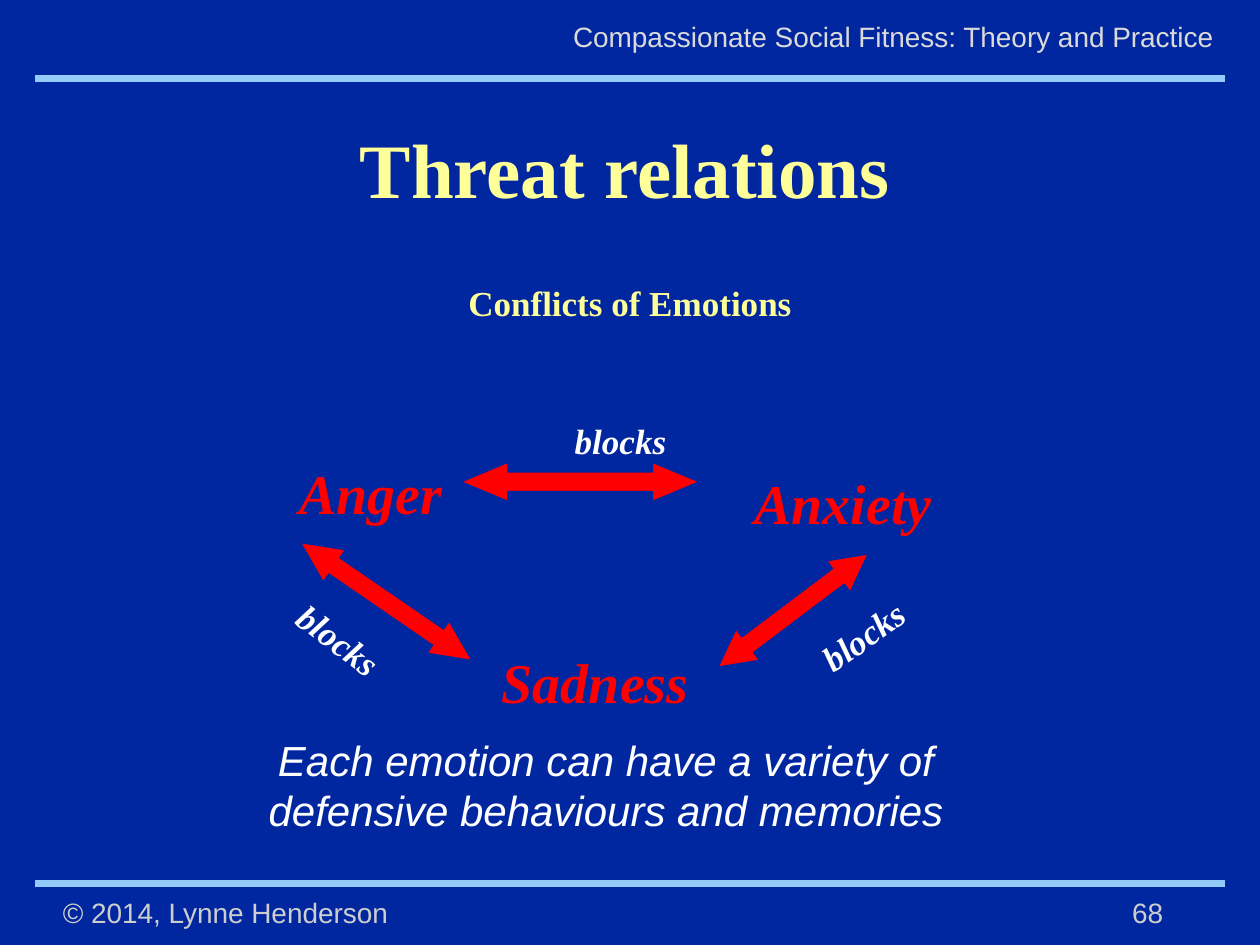
from dataclasses import dataclass

from lxml.etree import SubElement
from pptx import Presentation
from pptx.dml.color import RGBColor
from pptx.enum.shapes import MSO_CONNECTOR, MSO_SHAPE
from pptx.enum.text import MSO_ANCHOR, PP_ALIGN
from pptx.oxml.ns import qn
from pptx.util import Pt


@dataclass(frozen=True)
class Theme:
    background: str = "00279F"
    rule: str = "92CAFA"
    footer: str = "CECECE"
    header: str = "DADADA"
    heading: str = "FFFF99"
    emotion: str = "FF0000"
    white: str = "FFFFFF"
    serif: str = "Times New Roman"
    sans: str = "Arial"
    title_size: int = 44
    emotion_size: int = 32
    note_size: int = 24
    label_size: int = 20
    small_size: int = 16


THEME = Theme()


def color(value):
    return RGBColor.from_string(value)


def write(tf, text, *, size, fill, font=THEME.sans, bold=False, italic=False,
          align=PP_ALIGN.CENTER, anchor=MSO_ANCHOR.TOP):
    tf.word_wrap = True
    tf.vertical_anchor = anchor
    p = tf.paragraphs[0]
    p.alignment = align
    p.space_before = Pt(0)
    r = p.add_run()
    r.text = text
    r.font.name = font
    r.font.size = Pt(size)
    r.font.bold = bold
    r.font.italic = italic
    r.font.color.rgb = color(fill)
    return r


def place(sp, box):
    sp.left, sp.top, sp.width, sp.height = (Pt(v) for v in box)


def add_text(s, box, text, rotation=0, **style):
    sp = s.shapes.add_textbox(*(Pt(v) for v in box))
    sp.rotation = rotation
    write(sp.text_frame, text, **style)


def add_rule(s, left, top, width):
    line = s.shapes.add_connector(
        MSO_CONNECTOR.STRAIGHT, Pt(left), Pt(top), Pt(left + width), Pt(top))
    line.line.color.rgb = color(THEME.rule)
    line.line.width = Pt(4)
    SubElement(line._element.spPr, qn("a:effectLst"))


def add_header(s, box):
    x, y, w, h = box
    add_rule(s, x, y + h, w)
    add_text(s, (x + 285.1, y, 395.3, 26.6),
             "Compassionate Social Fitness: Theory and Practice",
             size=THEME.small_size, fill=THEME.header, align=PP_ALIGN.RIGHT)


def add_footer(s, box):
    x, y, w, h = box
    add_rule(s, x, y, w)
    style = dict(size=THEME.small_size, fill=THEME.footer)
    add_text(s, (x + 8.6, y + 3.6, 210, h - 3.6), "© 2014, Lynne Henderson",
             align=PP_ALIGN.LEFT, **style)
    add_text(s, (x + w - 78, y + 3.6, 50, h - 3.6), "68",
             align=PP_ALIGN.RIGHT, **style)


def add_title(s, box):
    sp = s.shapes.title
    place(sp, box)
    r = write(sp.text_frame, "Threat relations", size=THEME.title_size,
              fill=THEME.heading, font=THEME.serif, bold=True,
              anchor=MSO_ANCHOR.BOTTOM)
    effects = r.font._element.find(qn("a:solidFill"))
    shadow_list = effects.makeelement(qn("a:effectLst"))
    effects.addnext(shadow_list)
    shadow = SubElement(shadow_list, qn("a:outerShdw"), blurRad="38100",
                        dist="38100", dir="2700000", algn="tl")
    SubElement(shadow, qn("a:srgbClr"), val="000000")


def add_subtitle(s, box):
    sp = s.placeholders[1]
    place(sp, box)
    pPr = sp.text_frame.paragraphs[0]._p.get_or_add_pPr()
    pPr.set("marL", "0")
    pPr.set("indent", "0")
    SubElement(pPr, qn("a:buNone"))
    write(sp.text_frame, "Conflicts of Emotions", size=THEME.label_size,
          fill=THEME.heading, font=THEME.serif, bold=True)


def add_arrow(s, box, rotation, head):
    sp = s.shapes.add_shape(MSO_SHAPE.LEFT_RIGHT_ARROW, *(Pt(v) for v in box))
    sp.rotation = rotation
    sp.adjustments[0] = 0.5
    sp.adjustments[1] = head
    sp.shadow.inherit = False
    sp.fill.solid()
    sp.fill.fore_color.rgb = color(THEME.emotion)
    sp.line.color.rgb = color(THEME.background)
    sp.line.width = Pt(0.75)


def add_conflict_triangle(s, box):
    x, y = box[:2]
    style = dict(font=THEME.serif, bold=True, italic=True)
    emotions = [("Anger", 4.5, 22.5, 113), ("Anxiety", 248.6, 28.2, 164.2),
                ("Sadness", 124, 130.5, 130.3)]
    for name, dx, dy, w in emotions:
        add_text(s, (x + dx, y + dy, w, 41.8), name,
                 size=THEME.emotion_size, fill=THEME.emotion, **style)
    arrows = [(10.3, 96.6, 118.8, 34.5, 1.05), (112.5, 28.2, 136.1, 0, 1.2),
              (248.6, 101.7, 107.3, 323, 0.95)]
    for dx, dy, w, rotation, head in arrows:
        add_arrow(s, (x + dx, y + dy, w, 22.3), rotation, head)
    labels = [(0.2, 113.9, 84.2, 37), (288.2, 111.8, 108, 324.7),
              (141.3, 0.2, 124.6, 0)]
    for dx, dy, w, rotation in labels:
        add_text(s, (x + dx, y + dy, w, 31.7), "blocks", rotation,
                 size=THEME.label_size, fill=THEME.white, **style)


def add_note(s, box):
    add_text(s, box,
             "Each emotion can have a variety of defensive behaviours and memories",
             size=THEME.note_size, fill=THEME.white, italic=True)


def main():
    prs = Presentation()
    prs.slide_width, prs.slide_height = Pt(720), Pt(540)
    s = prs.slides.add_slide(prs.slide_layouts[1])
    s.background.fill.solid()
    s.background.fill.fore_color.rgb = color(THEME.background)
    add_header(s, (20.2, 7.9, 679.6, 36.7))
    add_footer(s, (20.2, 504.7, 679.6, 30.2))
    add_title(s, (48.2, 66.2, 617.8, 59.8))
    add_subtitle(s, (54, 157, 612, 324))
    add_conflict_triangle(s, (151, 236, 415, 174))
    add_note(s, (127.4, 416.2, 437.8, 65.5))
    prs.save("out.pptx")


if __name__ == "__main__":
    main()
